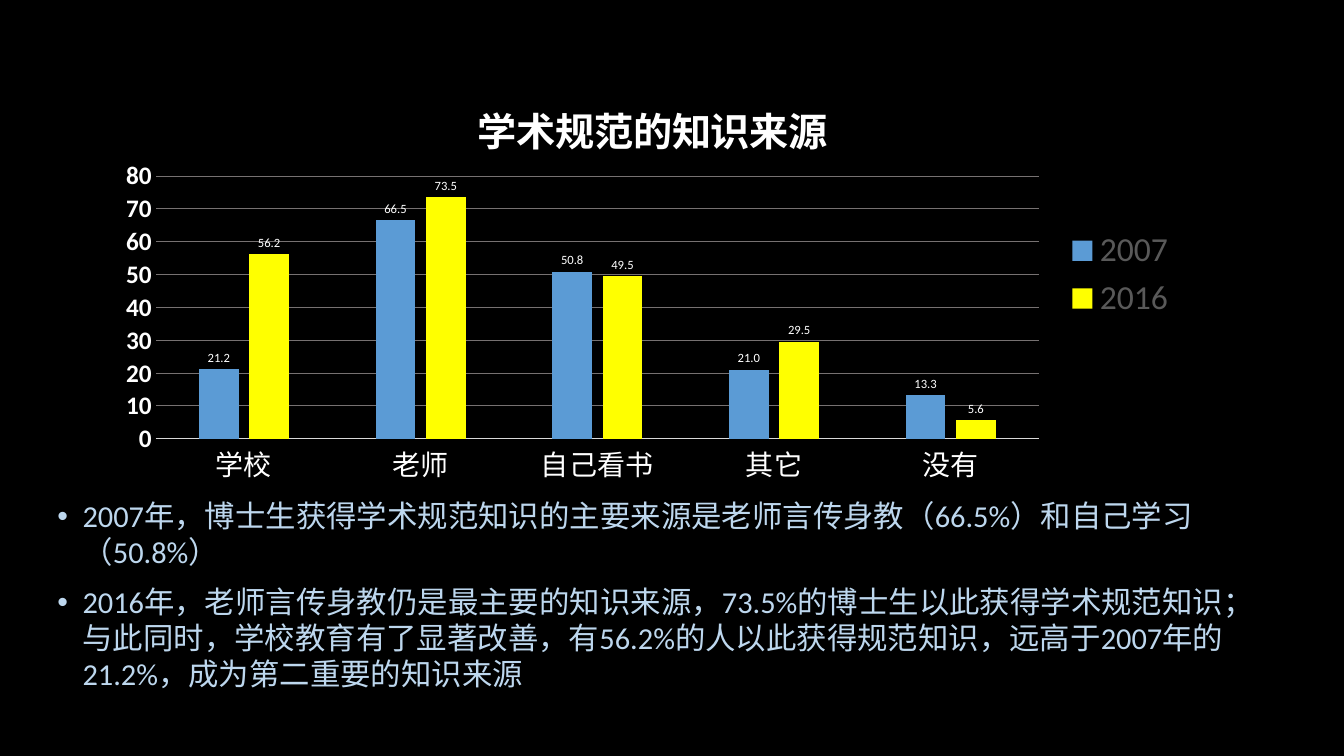
from dataclasses import dataclass

from lxml import etree
from pptx import Presentation
from pptx.chart.data import CategoryChartData
from pptx.dml.color import RGBColor
from pptx.enum.chart import XL_CHART_TYPE, XL_LABEL_POSITION, XL_LEGEND_POSITION, XL_TICK_MARK
from pptx.oxml import parse_xml
from pptx.oxml.ns import nsdecls, qn
from pptx.util import Inches, Pt

COLUMNS = XL_CHART_TYPE.COLUMN_CLUSTERED
OUTSIDE_END = XL_LABEL_POSITION.OUTSIDE_END
LEGEND_RIGHT = XL_LEGEND_POSITION.RIGHT
NO_TICKS = XL_TICK_MARK.NONE

SLIDE_WIDTH, SLIDE_HEIGHT = Inches(13.333), Inches(7.5)
FONT = "Calibri"
BLACK, WHITE, GRID_GRAY = "000000", "FFFFFF", "767171"
AXIS_GRAY, LEGEND_GRAY, PALE_BLUE = "D9D9D9", "595959", "BDD7EE"


@dataclass(frozen=True)
class Area:
    """Shares of the slide or of the chart; no size means automatic size."""
    left: float
    top: float
    width: float = 0
    height: float = 0

    def on_slide(self) -> tuple[int, int, int, int]:
        return (int(self.left * SLIDE_WIDTH), int(self.top * SLIDE_HEIGHT),
                int(self.width * SLIDE_WIDTH), int(self.height * SLIDE_HEIGHT))


@dataclass(frozen=True)
class YearSeries:
    year: str
    values: tuple[float, ...]
    color: str


CHART_AREA = Area(0.078, 0.076, 0.8055, 0.5747)
TITLE_AREA = Area(0.338, 0.073)
PLOT_AREA = Area(0.047, 0.273, 0.816, 0.605)
NOTES_AREA = Area(0.0353, 0.652, 0.912, 0.2973)

TITLE = "学术规范的知识来源"
SOURCES = ("学校", "老师", "自己看书", "其它", "没有")
YEARS = (
    YearSeries("2007", (21.2, 66.5, 50.8, 21.0, 13.3), "5B9BD5"),
    YearSeries("2016", (56.2, 73.5, 49.5, 29.5, 5.6), "FFFF00"),
)
FINDINGS = (
    "2007年，博士生获得学术规范知识的主要来源是老师言传身教（66.5%）和自己学习（50.8%）",
    "2016年，老师言传身教仍是最主要的知识来源，73.5%的博士生以此获得学术规范知识；"
    "与此同时，学校教育有了显著改善，有56.2%的人以此获得规范知识，"
    "远高于2007年的21.2%，成为第二重要的知识来源",
)


def rgb(color: str) -> RGBColor:
    return RGBColor.from_string(color)


def style_font(font, size: float, color: str, bold: bool = False) -> None:
    font.name = FONT
    font.size = Pt(size)
    font.bold = bold
    font.color.rgb = rgb(color)


def style_line(line, color: str) -> None:
    line.color.rgb = rgb(color)
    line.width = Pt(0.75)


def place_in_chart(element, area: Area, following: str, inner: bool = False) -> None:
    """Give a chart part a fixed place, ahead of its following sibling."""
    for old_layout in element.findall(qn("c:layout")):
        element.remove(old_layout)
    settings = [("layoutTarget", "inner")] if inner else []
    settings += [("xMode", "edge"), ("yMode", "edge"), ("x", area.left), ("y", area.top)]
    if area.width:
        settings += [("w", area.width), ("h", area.height)]
    values = "".join(f'<c:{name} val="{value}"/>' for name, value in settings)
    layout = parse_xml(f"<c:layout {nsdecls('c')}><c:manualLayout>{values}"
                       "</c:manualLayout></c:layout>")
    element.find(qn(following)).addprevious(layout)


def style_axes(chart) -> None:
    source_axis, percent_axis = chart.category_axis, chart.value_axis
    for axis in (source_axis, percent_axis):
        axis.major_tick_mark = axis.minor_tick_mark = NO_TICKS
    style_font(source_axis.tick_labels.font, 20, WHITE)
    style_line(source_axis.format.line, AXIS_GRAY)

    style_font(percent_axis.tick_labels.font, 18, WHITE, bold=True)
    percent_axis.tick_labels.number_format = "0"
    percent_axis.tick_labels.number_format_is_linked = False
    percent_axis.minimum_scale, percent_axis.maximum_scale = 0, 80
    percent_axis.major_unit = 10
    percent_axis.format.line.fill.background()
    style_line(percent_axis.major_gridlines.format.line, GRID_GRAY)


def style_columns(plot) -> None:
    plot.gap_width, plot.overlap = 219, -27
    plot.vary_by_categories = False
    for series, year in zip(plot.series, YEARS):
        series.format.fill.solid()
        series.format.fill.fore_color.rgb = rgb(year.color)
        labels = series.data_labels
        labels.show_value = True
        labels.position = OUTSIDE_END
        labels.number_format = "0.0"
        labels.number_format_is_linked = False
        style_font(labels.font, 9, WHITE)


def add_source_chart(slide) -> None:
    data = CategoryChartData(number_format="0.0")
    data.categories = SOURCES
    for year in YEARS:
        data.add_series(year.year, year.values)
    chart = slide.shapes.add_chart(COLUMNS, *CHART_AREA.on_slide(), data).chart
    style_font(chart.font, 10, BLACK)

    title_frame = chart.chart_title.text_frame
    title_frame.text = TITLE
    style_font(title_frame.paragraphs[0].runs[0].font, 28, WHITE, bold=True)
    chart.chart_title.include_in_layout = False

    chart.has_legend = True
    chart.legend.position = LEGEND_RIGHT
    chart.legend.include_in_layout = False
    style_font(chart.legend.font, 24, LEGEND_GRAY)

    style_axes(chart)
    style_columns(chart.plots[0])
    plot_area = chart.plots[0]._element.getparent()
    place_in_chart(plot_area, PLOT_AREA, "c:barChart", inner=True)
    place_in_chart(chart.chart_title._element, TITLE_AREA, "c:overlay")


def add_findings(slide) -> None:
    text_frame = slide.shapes.add_textbox(*NOTES_AREA.on_slide()).text_frame
    text_frame.word_wrap = True
    for index, finding in enumerate(FINDINGS):
        paragraph = text_frame.add_paragraph() if index else text_frame.paragraphs[0]
        paragraph.text = finding
        paragraph.space_before = Pt(10 if index else 0)
        paragraph.line_spacing = Pt(25.7)
        style_font(paragraph.runs[0].font, 21.7, PALE_BLUE)
        # Hanging bullet
        properties = paragraph._p.get_or_add_pPr()
        properties.set("marL", str(Inches(0.25)))
        properties.set("indent", str(-Inches(0.25)))
        etree.SubElement(properties, qn("a:buFont"), typeface="Arial")
        etree.SubElement(properties, qn("a:buChar"), char="•")


def main() -> None:
    presentation = Presentation()
    presentation.slide_width, presentation.slide_height = SLIDE_WIDTH, SLIDE_HEIGHT
    slide = presentation.slides.add_slide(presentation.slide_layouts[6])
    slide.background.fill.solid()
    slide.background.fill.fore_color.rgb = rgb(BLACK)
    add_source_chart(slide)
    add_findings(slide)
    presentation.save("out.pptx")


if __name__ == "__main__":
    main()
